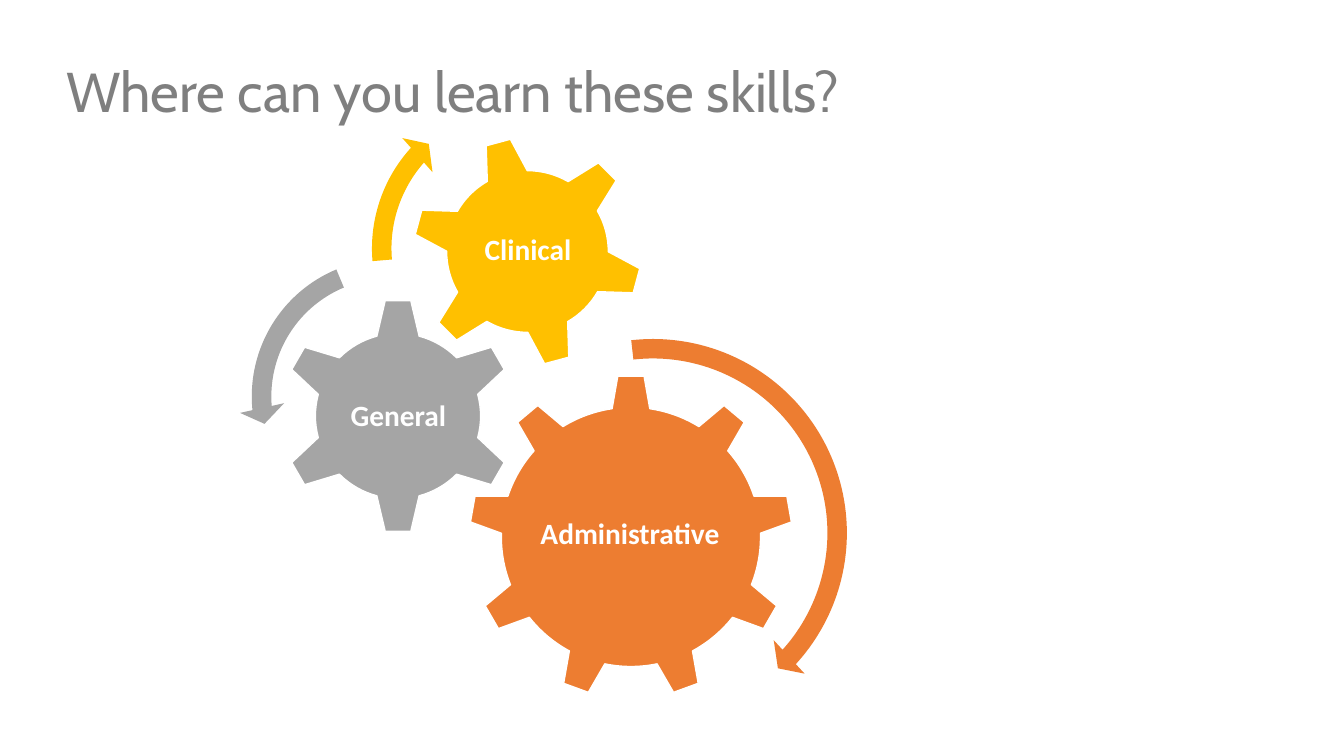
from pptx import Presentation
from pptx.dml.color import RGBColor
from pptx.enum.shapes import MSO_SHAPE
from pptx.enum.text import MSO_ANCHOR, PP_ALIGN
from pptx.util import Pt

ORANGE = RGBColor(0xED, 0x7D, 0x31)
GRAY = RGBColor(0xA5, 0xA5, 0xA5)
GOLD = RGBColor(0xFF, 0xC0, 0x00)
WHITE = RGBColor(0xFF, 0xFF, 0xFF)
TITLE_GRAY = RGBColor(0x7F, 0x7F, 0x7F)

TITLE = "Where can you learn these skills?"
TITLE_BOX = (56, 59, 1225, 102)

# label, colour, gear shape, gear (left, top, size), rotation, label box
GEARS = [
    ("Administrative", ORANGE, MSO_SHAPE.GEAR_9, (469, 375, 324), 0,
     (533, 452, 194, 166)),
    ("General", GRAY, MSO_SHAPE.GEAR_6, (280, 298, 236), 0,
     (340, 359, 117, 116)),
    ("Clinical", GOLD, MSO_SHAPE.GEAR_6, (412, 136, 231), 345,
     (463, 186, 130, 130)),
]

# colour, arrow shape, (left, top, size), thickness, head angle, end angle,
# start angle, head width; angles in degrees
ARROWS = [
    (ORANGE, MSO_SHAPE.CIRCULAR_ARROW, (446, 326, 414),
     0.047, 4.98, 42.3, 263.58, 0.055),
    (GRAY, MSO_SHAPE.LEFT_CIRCULAR_ARROW, (239, 246, 301),
     0.065, 7.17, 174.82, 247.3, 0.075),
    (GOLD, MSO_SHAPE.CIRCULAR_ARROW, (359, 86, 325),
     0.06, 6.57, 221.9, 175.14, 0.07),
]

EMU_PER_PX = 914400 / 100.8
ANGLE_UNIT = 0.6  # adjustment value of one degree


def px(*lengths):
    return [round(n * EMU_PER_PX) for n in lengths]


def add_square_shape(slide, kind, box, color):
    left, top, size = px(*box)
    sp = slide.shapes.add_shape(kind, left, top, size, size)
    sp.shadow.inherit = False
    sp.fill.solid()
    sp.fill.fore_color.rgb = color
    return sp


def write(tf, text, font, size, color, bold, align, anchor):
    tf.word_wrap = True
    tf.vertical_anchor = anchor
    tf.text = text
    p = tf.paragraphs[0]
    p.alignment = align
    p.line_spacing = 0.9
    f = p.runs[0].font
    f.name, f.size, f.bold = font, Pt(size), bold
    f.color.rgb = color


def add_gear(slide, color, kind, box, rotation):
    sp = add_square_shape(slide, kind, box, color)
    sp.rotation = rotation
    sp.line.color.rgb = WHITE
    sp.line.width = Pt(1)


def add_label(slide, text, box):
    tf = slide.shapes.add_textbox(*px(*box)).text_frame
    tf.margin_left = tf.margin_right = tf.margin_top = tf.margin_bottom = px(3)[0]
    write(tf, text, "Calibri", 21, WHITE, True, PP_ALIGN.CENTER, MSO_ANCHOR.MIDDLE)


def add_arrow(slide, color, kind, box, thickness, head, end, start, head_width):
    sp = add_square_shape(slide, kind, box, color)
    sp.line.fill.background()
    angles = [a * ANGLE_UNIT for a in (head, end, start)]
    for i, value in enumerate([thickness, *angles, head_width]):
        sp.adjustments[i] = value


def main():
    prs = Presentation()
    prs.slide_width, prs.slide_height = px(1344, 756)
    slide = prs.slides.add_slide(prs.slide_layouts[5])

    title = slide.shapes.title
    title.left, title.top, title.width, title.height = px(*TITLE_BOX)
    write(title.text_frame, TITLE, "Cabin", 40, TITLE_GRAY, False,
          PP_ALIGN.LEFT, MSO_ANCHOR.TOP)

    for label, color, kind, box, rotation, label_box in GEARS:
        add_gear(slide, color, kind, box, rotation)
        add_label(slide, label, label_box)
    for arrow in ARROWS:
        add_arrow(slide, *arrow)

    prs.save("out.pptx")


if __name__ == "__main__":
    main()
